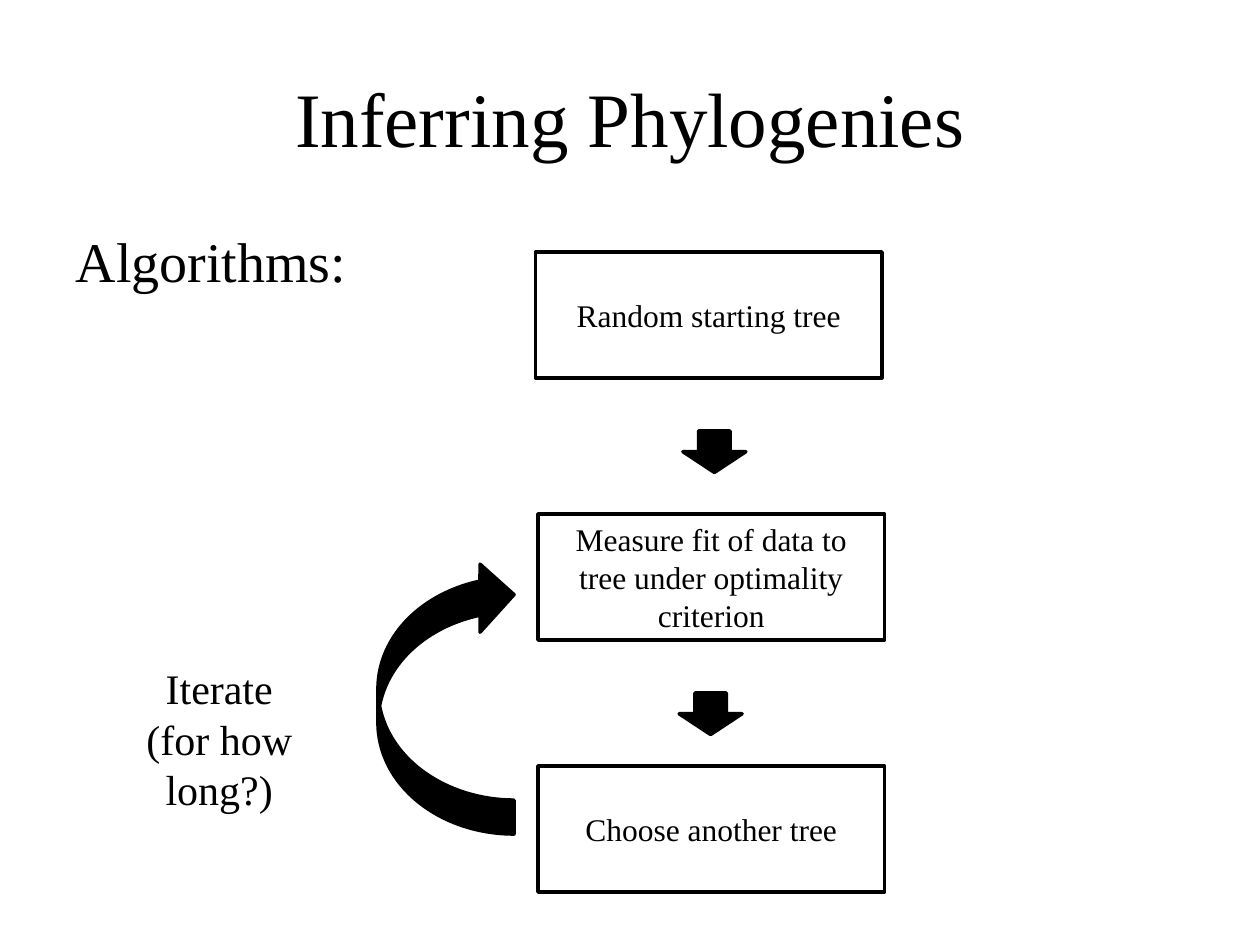
"""Build the slide that shows the iterative algorithm for inferring phylogenies."""
from typing import NamedTuple

from pptx import Presentation
from pptx.dml.color import RGBColor
from pptx.enum.shapes import MSO_SHAPE
from pptx.enum.text import MSO_ANCHOR, PP_ALIGN
from pptx.oxml.xmlchemy import OxmlElement
from pptx.util import Inches, Pt

COLORS = {"ink": "000000", "paper": "FFFFFF"}
FONT = "Times New Roman"


class Box(NamedTuple):
    left: float
    top: float
    width: float
    height: float

    def emu(self) -> list:
        return [Inches(v) for v in self]


class Step(NamedTuple):
    text: str
    left: float
    top: float


class Arrow(NamedTuple):
    kind: MSO_SHAPE
    box: Box
    flipped: bool = False


STEPS = [
    Step("Random starting tree", 4.25, 2),
    Step("Measure fit of data to tree under optimality criterion", 4.27, 4.08),
    Step("Choose another tree", 4.27, 6.08),
]
ARROWS = [
    Arrow(MSO_SHAPE.DOWN_ARROW, Box(5.42, 3.42, 0.5, 0.33)),
    Arrow(MSO_SHAPE.DOWN_ARROW, Box(5.39, 5.5, 0.5, 0.33)),
    Arrow(MSO_SHAPE.CURVED_LEFT_ARROW, Box(3, 4.45, 1.08, 2.17), True),
]


def rgb(name: str) -> RGBColor:
    return RGBColor.from_string(COLORS[name])


def write(sp, text: str, size: int, align: PP_ALIGN, anchor: MSO_ANCHOR) -> None:
    tf = sp.text_frame
    tf.text = text
    tf.word_wrap = True
    tf.vertical_anchor = anchor
    for p in tf.paragraphs:
        p.alignment = align
        for r in p.runs:
            r.font.name = FONT
            r.font.size = Pt(size)
            r.font.color.rgb = rgb("ink")


def place(sp, box: Box) -> None:
    sp.left, sp.top, sp.width, sp.height = box.emu()


def add_shape(s, kind: MSO_SHAPE, box: Box, fill: str):
    sp = s.shapes.add_shape(kind, *box.emu())
    sp.shadow.inherit = False
    sp.fill.solid()
    sp.fill.fore_color.rgb = rgb(fill)
    sp.line.color.rgb = rgb("ink")
    sp.line.width = Pt(2)
    return sp


def add_step(s, step: Step) -> None:
    sp = add_shape(s, MSO_SHAPE.RECTANGLE, Box(step.left, step.top, 2.75, 1), "paper")
    write(sp, step.text, 18, PP_ALIGN.CENTER, MSO_ANCHOR.MIDDLE)


def add_arrow(s, arrow: Arrow) -> None:
    sp = add_shape(s, arrow.kind, arrow.box, "ink")
    if arrow.flipped:
        xfrm = sp._element.spPr.xfrm
        xfrm.set("flipH", "1")
        xfrm.set("flipV", "1")


def remove_bullet(p) -> None:
    pPr = p._p.get_or_add_pPr()
    pPr.set("marL", "0")
    pPr.set("indent", "0")
    pPr.append(OxmlElement("a:buNone"))


def main() -> None:
    prs = Presentation()
    prs.slide_width, prs.slide_height = Inches(10), Inches(7.5)
    s = prs.slides.add_slide(prs.slide_layouts[1])

    title, body = s.placeholders
    place(title, Box(0.5, 0.3, 9, 1.25))
    write(title, "Inferring Phylogenies", 44, PP_ALIGN.CENTER, MSO_ANCHOR.MIDDLE)
    place(body, Box(0.5, 1.75, 9, 0.92))
    write(body, "Algorithms:", 32, PP_ALIGN.LEFT, MSO_ANCHOR.TOP)
    remove_bullet(body.text_frame.paragraphs[0])

    for step in STEPS:
        add_step(s, step)
    for arrow in ARROWS:
        add_arrow(s, arrow)

    note = s.shapes.add_textbox(*Box(0.63, 5.21, 2.22, 0.91).emu())
    write(note, "Iterate\n(for how long?)", 24, PP_ALIGN.CENTER, MSO_ANCHOR.TOP)
    prs.save("out.pptx")


if __name__ == "__main__":
    main()
